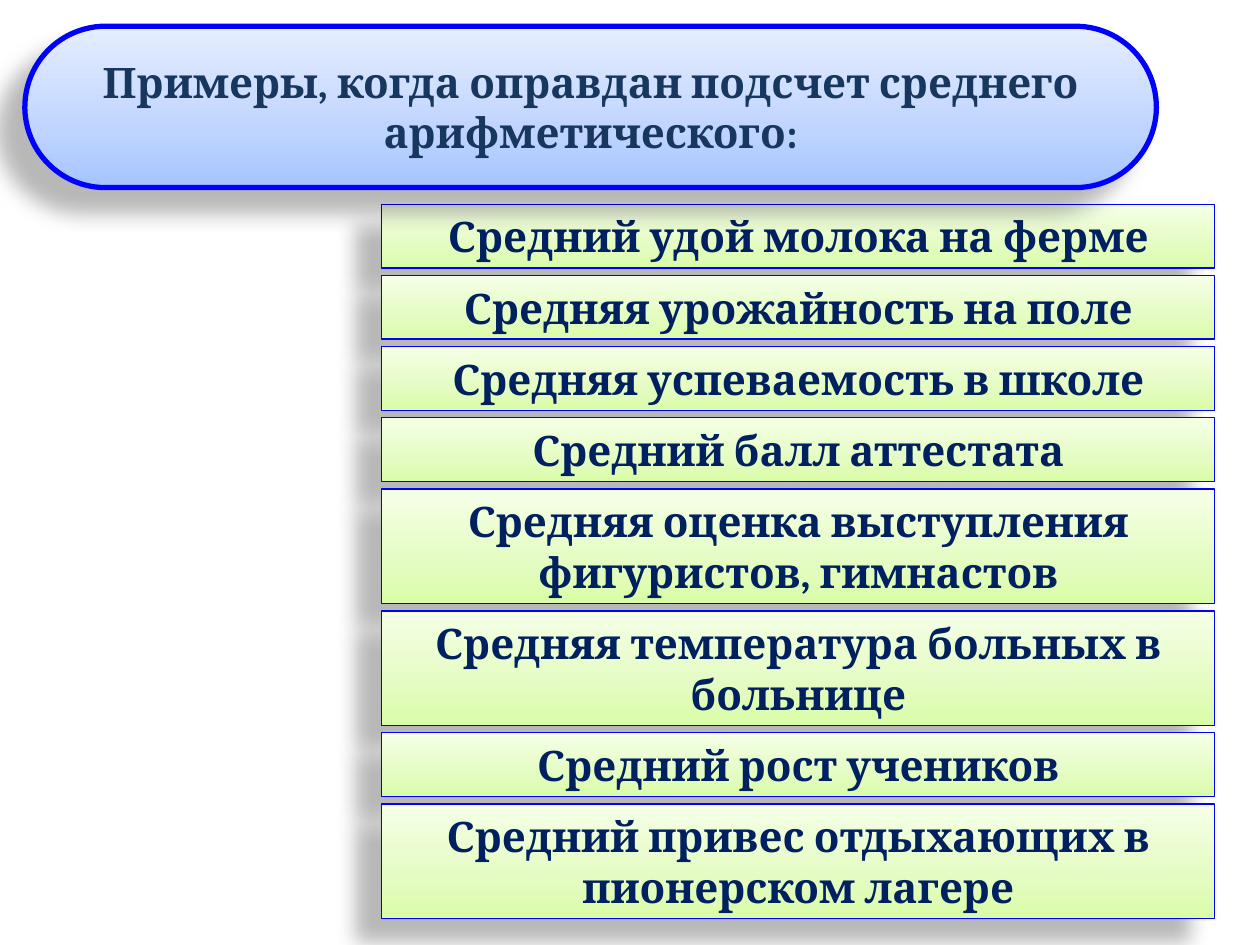
from lxml.etree import SubElement
from pptx import Presentation
from pptx.dml.color import RGBColor
from pptx.enum.shapes import MSO_SHAPE as Shape
from pptx.enum.text import MSO_ANCHOR as Anchor, MSO_AUTO_SIZE as AutoSize, PP_ALIGN as Align
from pptx.oxml.ns import qn
from pptx.util import Pt

TITLE = "Примеры, когда оправдан подсчет среднего арифметического:"
# Example and the number of lines it takes
EXAMPLES = [
    ("Средний удой молока на ферме", 1),
    ("Средняя урожайность на поле", 1),
    ("Средняя успеваемость в школе", 1),
    ("Средний балл аттестата", 1),
    ("Средняя оценка выступления фигуристов, гимнастов", 2),
    ("Средняя температура больных в больнице", 2),
    ("Средний рост учеников", 1),
    ("Средний привес отдыхающих в пионерском лагере", 2),
]

BLUE_STOPS = [(0, "A4C4FF"), (35, "BFD4FF"), (100, "E6EEFF")]
GREEN_STOPS = [(0, "DAFDA7"), (35, "E4FCC2"), (100, "F5FFE7")]
BORDER = "0000FF"

LIST_LEFT, LIST_TOP, LIST_WIDTH = 218.2, 116.8, 476
ROW_HEIGHT = {1: 36.35, 2: 65.4}
ROW_GAP = 4.3


def color(hex_string):
    return RGBColor.from_string(hex_string)


def set_gradient(fill, stops):
    fill.gradient()
    fill.gradient_angle = 90
    stop_list = fill._xPr.find(".//" + qn("a:gsLst"))
    stop_list.clear()
    for position, hex_string in stops:
        stop = SubElement(stop_list, qn("a:gs"), pos=str(position * 1000))
        SubElement(stop, qn("a:srgbClr"), val=hex_string)


def set_shadow(panel):
    panel.shadow.inherit = False
    effects = panel._element.spPr.find(qn("a:effectLst"))
    shadow = SubElement(effects, qn("a:outerShdw"), blurRad=str(Pt(11.8)),
                        dist=str(Pt(19.7)), dir=str(141 * 60000),
                        algn="ctr", rotWithShape="0")
    black = SubElement(shadow, qn("a:srgbClr"), val="000000")
    SubElement(black, qn("a:alpha"), val="28000")


def add_panel(slide, kind, box, text, stops, border_width, text_color, space_after=0):
    panel = slide.shapes.add_shape(kind, *(Pt(length) for length in box))
    set_gradient(panel.fill, stops)
    panel.line.color.rgb = color(BORDER)
    panel.line.width = Pt(border_width)
    set_shadow(panel)

    frame = panel.text_frame
    frame.word_wrap = True
    frame.auto_size = AutoSize.SHAPE_TO_FIT_TEXT
    frame.vertical_anchor = Anchor.MIDDLE
    paragraph = frame.paragraphs[0]
    paragraph.alignment = Align.CENTER
    paragraph.space_after = Pt(space_after)
    run = paragraph.add_run()
    run.text = text
    run.font.name = "Cambria"
    run.font.size = Pt(24)
    run.font.bold = True
    run.font.color.rgb = color(text_color)
    return panel


def main():
    deck = Presentation()
    deck.slide_width, deck.slide_height = Pt(720), Pt(540)
    slide = deck.slides.add_slide(deck.slide_layouts[6])

    top = LIST_TOP
    for index, (example, lines) in enumerate(EXAMPLES):
        # Example row
        height = ROW_HEIGHT[lines]
        add_panel(slide, Shape.RECTANGLE, (LIST_LEFT, top, LIST_WIDTH, height),
                  example, GREEN_STOPS, 0.75, "002060", space_after=6)
        top += height + ROW_GAP

        # Title: its shadow falls on the first row only
        if index == 0:
            title = add_panel(slide, Shape.ROUNDED_RECTANGLE, (14.2, 15, 646.6, 92.2),
                              TITLE, BLUE_STOPS, 3, "17375E")
            title.adjustments[0] = 0.5
            title.text_frame.auto_size = AutoSize.NONE

    deck.save("out.pptx")


if __name__ == "__main__":
    main()
